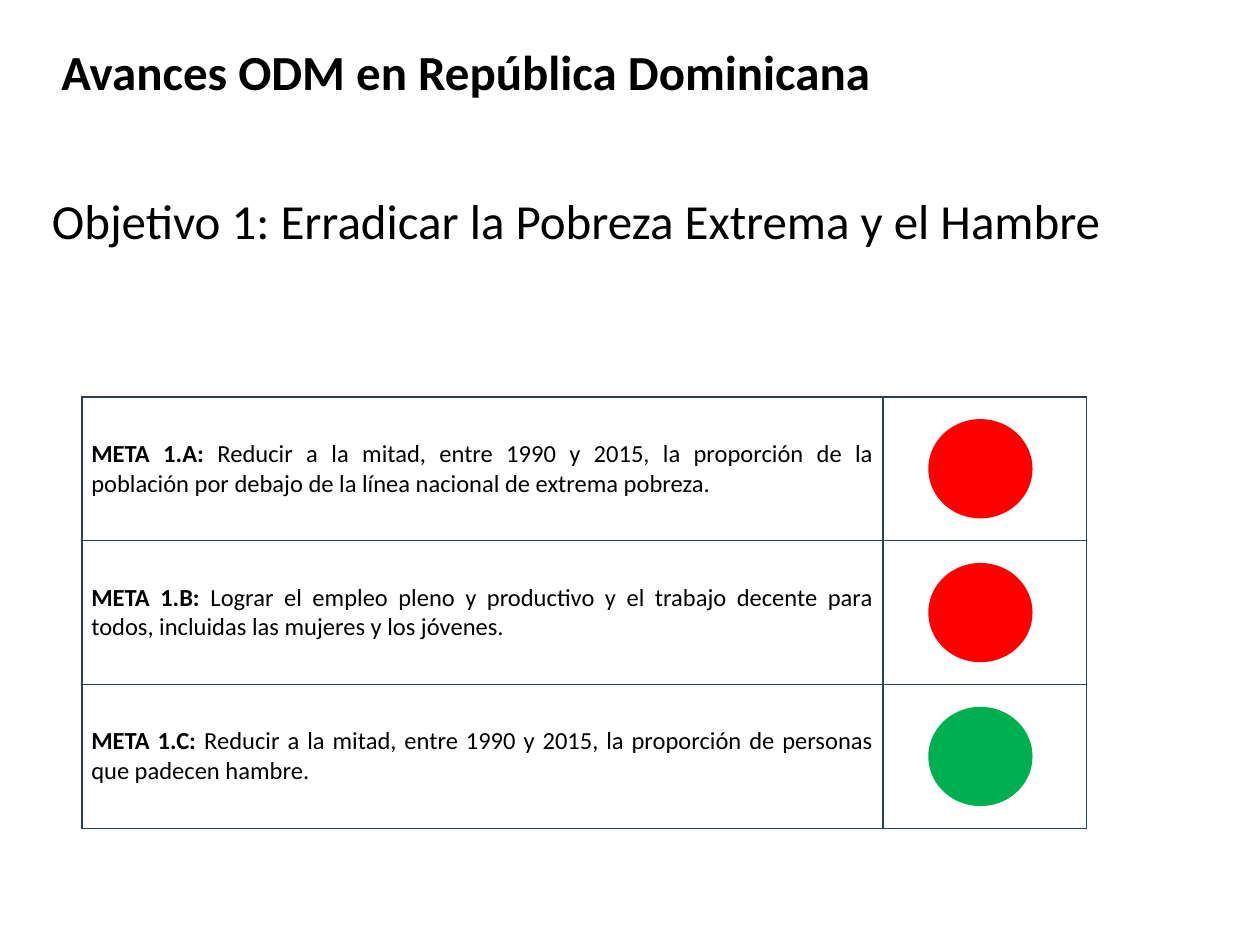
from lxml.etree import SubElement
from pptx import Presentation
from pptx.dml.color import RGBColor
from pptx.enum.shapes import MSO_SHAPE
from pptx.enum.text import MSO_ANCHOR, PP_ALIGN
from pptx.oxml.ns import qn
from pptx.util import Cm, Pt

GOALS = [
    ("META 1.A:", "Reducir a la mitad, entre 1990 y 2015, la proporción de la "
     "población por debajo de la línea nacional de extrema pobreza.", "FF0000"),
    ("META 1.B:", "Lograr el empleo pleno y productivo y el trabajo decente para "
     "todos, incluidas las mujeres y los jóvenes.", "FF0000"),
    ("META 1.C:", "Reducir a la mitad, entre 1990 y 2015, la proporción de "
     "personas que padecen hambre.", "00B050"),
]
TABLE_LEFT, TABLE_TOP, ROW_HEIGHT = 1.65, 8, 2.9
COLUMN_WIDTHS = [16.15, 4.1]
LIGHT_LEFT, LIGHT_WIDTH, LIGHT_HEIGHT = 18.75, 2.03, 1.93


def color(hex_text):
    return RGBColor.from_string(hex_text)


class SlideBuilder:
    font_name = "Calibri"
    text_color = "000000"
    border_color = "254061"

    def __init__(self, page):
        self.page = page

    def style(self, para, size, bold=None):
        para.font.name = self.font_name
        para.font.size = Pt(size)
        para.font.bold = bold
        para.font.color.rgb = color(self.text_color)

    def title(self, text, left, top, width, height):
        box = self.page.shapes.title
        box.left, box.top, box.width, box.height = map(Cm, (left, top, width, height))
        frame = box.text_frame
        frame.text = text
        frame.word_wrap = True
        frame.vertical_anchor = MSO_ANCHOR.MIDDLE
        para = frame.paragraphs[0]
        para.alignment = PP_ALIGN.CENTER
        para.line_spacing = 0.9
        self.style(para, 28, False)

    def shape(self, kind, left, top, width, height):
        shape = self.page.shapes.add_shape(kind, *map(Cm, (left, top, width, height)))
        shape.shadow.inherit = False
        return shape

    def heading(self, text, left, top, width, height):
        box = self.shape(MSO_SHAPE.ROUNDED_RECTANGLE, left, top, width, height)
        box.fill.background()
        box.line.fill.background()
        frame = box.text_frame
        frame.text = text
        frame.vertical_anchor = MSO_ANCHOR.MIDDLE
        para = frame.paragraphs[0]
        para.alignment = PP_ALIGN.LEFT
        self.style(para, 28, True)

    def light(self, hex_text, left, top, width, height):
        """Add a traffic-light disc showing the state of a goal."""
        disc = self.shape(MSO_SHAPE.OVAL, left, top, width, height)
        disc.fill.solid()
        disc.fill.fore_color.rgb = color(hex_text)
        disc.line.color.rgb = color(hex_text)
        disc.line.width = Pt(2)

    def borders(self, cell):
        properties = cell._tc.get_or_add_tcPr()
        for position, side in enumerate(("a:lnL", "a:lnR", "a:lnT", "a:lnB")):
            line = SubElement(properties, qn(side), w=str(Pt(1)))
            fill = SubElement(line, qn("a:solidFill"))
            SubElement(fill, qn("a:srgbClr"), val=self.border_color)
            properties.insert(position, line)

    def goal_table(self, goals, left, top, widths, row_height):
        table = self.page.shapes.add_table(
            len(goals), len(widths), Cm(left), Cm(top),
            Cm(sum(widths)), Cm(row_height * len(goals))).table
        table.first_row = table.horz_banding = False
        for column, width in zip(table.columns, widths):
            column.width = Cm(width)
        for row, (label, text, _) in zip(table.rows, goals):
            row.height = Cm(row_height)
            for cell in row.cells:
                cell.fill.background()
                cell.vertical_anchor = MSO_ANCHOR.MIDDLE
                cell.margin_left = cell.margin_right = Cm(0.19)
                cell.margin_top = cell.margin_bottom = Cm(0.1)
                self.borders(cell)
            para = row.cells[0].text_frame.paragraphs[0]
            para.alignment = PP_ALIGN.JUSTIFY
            self.style(para, 14)
            for words, bold in ((label, True), (" " + text, False)):
                span = para.add_run()
                span.text = words
                span.font.bold = bold


def main():
    deck = Presentation()
    deck.slide_width, deck.slide_height = Cm(25.4), Cm(19.05)
    builder = SlideBuilder(deck.slides.add_slide(deck.slide_layouts[5]))

    builder.title("Objetivo 1: Erradicar la Pobreza Extrema y el Hambre",
                  0, 3.12, 23.22, 2.77)
    builder.goal_table(GOALS, TABLE_LEFT, TABLE_TOP, COLUMN_WIDTHS, ROW_HEIGHT)
    first_light_top = TABLE_TOP + (ROW_HEIGHT - LIGHT_HEIGHT) / 2
    for index, (_, _, state) in enumerate(GOALS):
        builder.light(state, LIGHT_LEFT, first_light_top + index * ROW_HEIGHT,
                      LIGHT_WIDTH, LIGHT_HEIGHT)
    builder.heading("Avances ODM en República Dominicana", 0.9, 0.53, 18.8, 1.8)

    deck.save("out.pptx")


if __name__ == "__main__":
    main()
